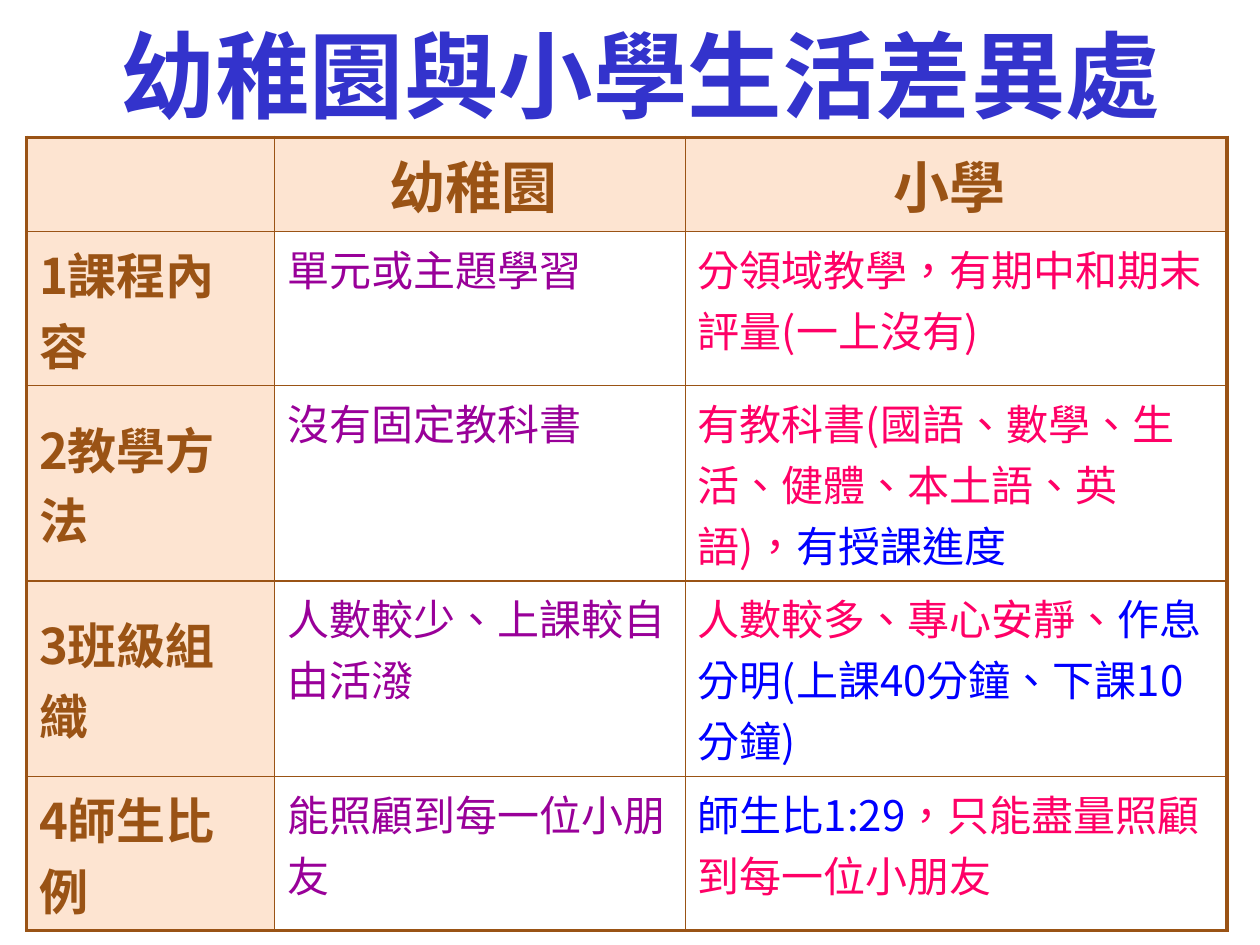
"""Build a slide comparing kindergarten and primary school life in a table."""
import pptx
import pptx.dml.color
import pptx.enum.lang
import pptx.enum.text
import pptx.oxml
import pptx.oxml.ns
import pptx.util
from lxml import etree

BROWN, PEACH, PURPLE, PINK, BLUE = "9A5315", "FDE4D1", "990099", "FF0066", "0000FF"
SC, TC = "Noto Sans CJK SC", "Noto Sans CJK TC"
THIN, THICK = 1, 2.25


def paint(fill, color):
    fill.solid()
    fill.fore_color.rgb = pptx.dml.color.RGBColor.from_string(color)


def write(paragraph, pieces, size, face, bold):
    font = paragraph.font
    font.size, font.bold, font.name = pptx.util.Pt(size), bold, face
    font.language_id = pptx.enum.lang.MSO_LANGUAGE_ID.TRADITIONAL_CHINESE
    paint(font.fill, pieces[0][1])
    east_asian = etree.SubElement(font._rPr, pptx.oxml.ns.qn("a:ea"))
    east_asian.set("typeface", face)
    for words, color in pieces:
        run = paragraph.add_run()
        run.text = words
        if len(pieces) > 1:
            paint(run.font.fill, color)


presentation = pptx.Presentation()
presentation.slide_width = pptx.util.Inches(10)
presentation.slide_height = pptx.util.Inches(7.5)
slide = presentation.slides.add_slide(presentation.slide_layouts[5])

heading = slide.shapes.title
heading.left, heading.top = pptx.util.Inches(0.42), pptx.util.Inches(0.16)
heading.width, heading.height = pptx.util.Inches(9.33), pptx.util.Inches(0.94)
heading.text_frame.auto_size = pptx.enum.text.MSO_AUTO_SIZE.NONE
heading.text_frame.vertical_anchor = pptx.enum.text.MSO_ANCHOR.BOTTOM
heading_line = heading.text_frame.paragraphs[0]
heading_line.alignment = pptx.enum.text.PP_ALIGN.CENTER
heading_line.line_spacing = 0.9
write(heading_line, [("幼稚園與小學生活差異處", "3333CC")], 54, SC, True)

comparison = [
    ("", [("幼稚園 ", BROWN)], [("小學 ", BROWN)]),
    ("1課程內容", [("單元或主題學習", PURPLE)],
     [("分領域教學，有期中和期末評量(一上沒有)", PINK)]),
    ("2教學方法", [("沒有固定教科書", PURPLE)],
     [("有教科書(國語、數學、生活、健體、本土語、英語)，", PINK), ("有授課進度", BLUE)]),
    ("3班級組織", [("人數較少、上課較自由活潑", PURPLE)],
     [("人數較多、專心安靜、", PINK), ("作息分明(上課40分鐘、下課10分鐘)", BLUE)]),
    ("4師生比例", [("能照顧到每一位小朋友", PURPLE)],
     [("師生比1:29", BLUE), ("，只能盡量照顧到每一位小朋友", PINK)]),
]
column_widths = [1.97, 3.26, 4.3]
row_heights = [0.71, 1.13, 1.5, 1.5, 1.16]
last_row, last_column = len(row_heights) - 1, len(column_widths) - 1

table = slide.shapes.add_table(
    len(row_heights), len(column_widths), pptx.util.Inches(0.21), pptx.util.Inches(1.09),
    pptx.util.Inches(sum(column_widths)), pptx.util.Inches(sum(row_heights))).table
table.first_row = table.horz_banding = False
for column, width in zip(table.columns, column_widths):
    column.width = pptx.util.Inches(width)
for row, height in zip(table.rows, row_heights):
    row.height = pptx.util.Inches(height)

for r, (topic, kindergarten, primary) in enumerate(comparison):
    for c, pieces in enumerate([[(topic, BROWN)], kindergarten, primary]):
        cell = table.cell(r, c)
        is_label = r == 0 or c == 0
        if is_label:
            paint(cell.fill, PEACH)
            cell.vertical_anchor = pptx.enum.text.MSO_ANCHOR.MIDDLE
        else:
            cell.fill.background()

        outer_edges = {"L": c == 0, "R": c == last_column, "T": r == 0, "B": r == last_row}
        for place, (side, outer) in enumerate(outer_edges.items()):
            points = THICK if outer else THIN
            cell._tc.get_or_add_tcPr().insert(place, pptx.oxml.parse_xml(
                f'<a:ln{side} {pptx.oxml.ns.nsdecls("a")} w="{pptx.util.Pt(points)}">'
                f'<a:solidFill><a:srgbClr val="{BROWN}"/></a:solidFill></a:ln{side}>'))

        if pieces[0][0]:
            line = cell.text_frame.paragraphs[0]
            if r == 0:
                line.alignment = pptx.enum.text.PP_ALIGN.CENTER
            size = 32 if r == 0 else 28 if c == 0 else 24
            write(line, pieces, size, TC if is_label else SC, is_label)

presentation.save("out.pptx")
